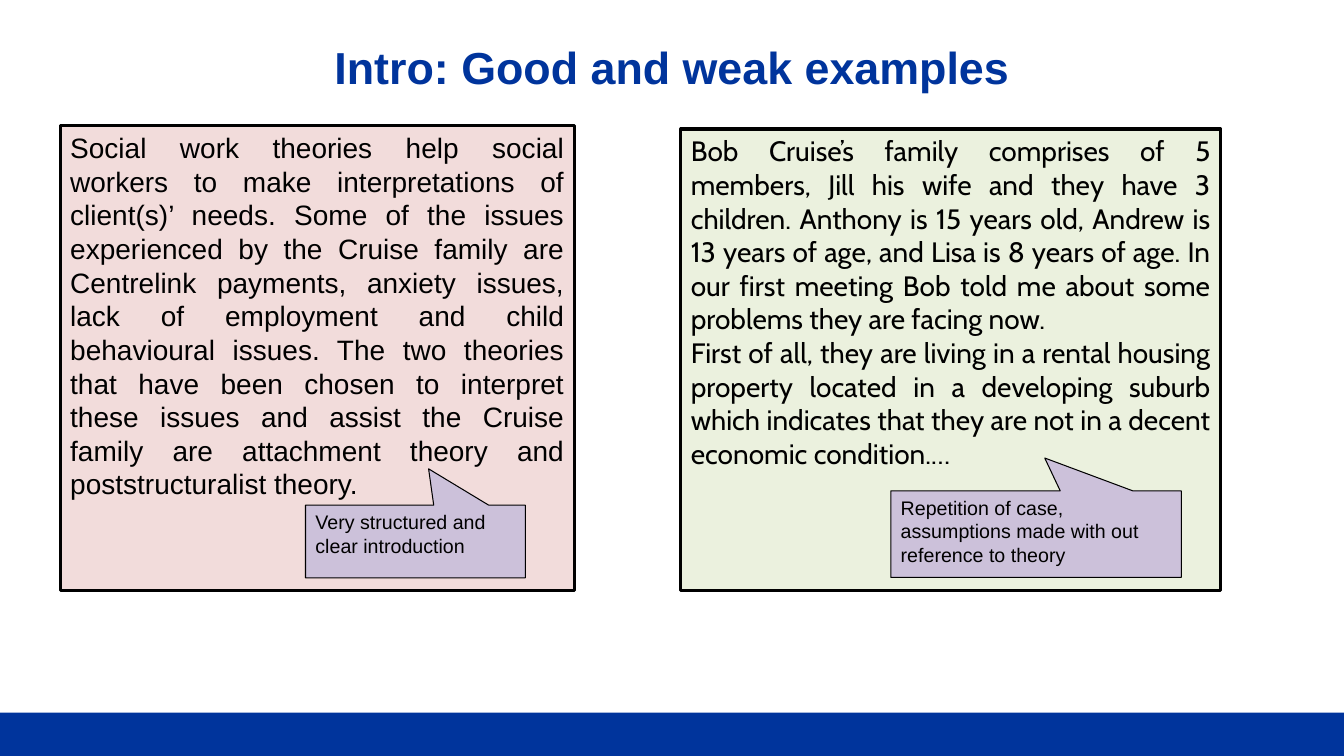
from pptx import Presentation
from pptx.dml.color import RGBColor
from pptx.enum.shapes import MSO_SHAPE as Shape
from pptx.enum.text import MSO_ANCHOR as Anchor, PP_ALIGN as Align
from pptx.util import Cm, Pt

COLOURS = {
    "blue": "00349C",
    "black": "000000",
    "pink": "F2DCDB",
    "green": "EBF1DE",
    "lilac": "CCC1DA",
}

# Format values for each kind of text
TITLE_FONT = {"name": "Arial", "size": Pt(32), "bold": True}
STRUCTURED_FONT = {"name": "Arial", "size": Pt(20)}
REPETITIVE_FONT = {"name": "Cabin", "size": Pt(20)}
COMMENT_FONT = {"name": "Arial", "size": Pt(14)}

STRUCTURED_INTRO = [
    "Social work theories help social workers to make interpretations of "
    "client(s)’ needs. Some of the issues experienced by the Cruise family are "
    "Centrelink payments, anxiety issues, lack of employment and child "
    "behavioural issues. The two theories that have been chosen to interpret "
    "these issues and assist the Cruise family are attachment theory and "
    "poststructuralist theory.",
]
REPETITIVE_INTRO = [
    "Bob Cruise’s family comprises of 5 members, Jill his wife and they have 3 "
    "children. Anthony is 15 years old, Andrew is 13 years of age, and Lisa is "
    "8 years of age. In our first meeting Bob told me about some problems they "
    "are facing now.",
    "First of all, they are living in a rental housing property located in a "
    "developing suburb which indicates that they are not in a decent economic "
    "condition.…",
]


def colour(name):
    return RGBColor.from_string(COLOURS[name])


def write(frame, texts, font, align, ink="black", anchor=Anchor.TOP):
    frame.word_wrap = True
    frame.vertical_anchor = anchor
    for index, text in enumerate(texts):
        paragraph = frame.paragraphs[0] if index == 0 else frame.add_paragraph()
        paragraph.text = text
        paragraph.alignment = align
        for attribute, value in font.items():
            setattr(paragraph.font, attribute, value)
        paragraph.font.color.rgb = colour(ink)


def add_panel(slide, kind, place, fill, line_width=None):
    panel = slide.shapes.add_shape(kind, *map(Cm, place))
    panel.shadow.inherit = False
    panel.fill.solid()
    panel.fill.fore_color.rgb = colour(fill)
    if line_width:
        panel.line.color.rgb = colour("black")
        panel.line.width = Pt(line_width)
    else:
        panel.line.fill.background()
    return panel


def add_title(slide, place, text):
    title = slide.shapes.add_textbox(*map(Cm, place))
    write(title.text_frame, [text], TITLE_FONT, Align.CENTER, "blue", Anchor.MIDDLE)


def add_example(slide, place, fill, texts, font):
    example = add_panel(slide, Shape.RECTANGLE, place, fill, 2.25)
    write(example.text_frame, texts, font, Align.JUSTIFY)


def add_comment(slide, place, tip, text):
    comment = add_panel(slide, Shape.RECTANGULAR_CALLOUT, place, "lilac", 0.75)
    for index, offset in enumerate(tip):
        comment.adjustments[index] = offset
    write(comment.text_frame, [text], COMMENT_FONT, Align.LEFT)


def main():
    deck = Presentation()
    deck.slide_width, deck.slide_height = Cm(33.87), Cm(19.05)
    slide = deck.slides.add_slide(deck.slide_layouts[6])

    # Footer band and title
    add_panel(slide, Shape.RECTANGLE, (0, 17.96, 33.87, 1.09), "blue")
    add_title(slide, (1.7, 0.76, 30.48, 1.85), "Intro: Good and weak examples")

    # Example introductions
    add_example(slide, (1.52, 3.17, 12.95, 11.71), "pink",
                STRUCTURED_INTRO, STRUCTURED_FONT)
    add_example(slide, (17.16, 3.25, 13.6, 11.63), "green",
                REPETITIVE_INTRO, REPETITIVE_FONT)

    # Comments on the examples
    add_comment(slide, (7.7, 12.73, 5.54, 1.83), (0.06, -1),
                "Very structured and clear introduction")
    add_comment(slide, (22.45, 12.37, 7.32, 2.18), (0.03, -0.88),
                "Repetition of case, assumptions made with out reference to theory")

    deck.save("out.pptx")


if __name__ == "__main__":
    main()
